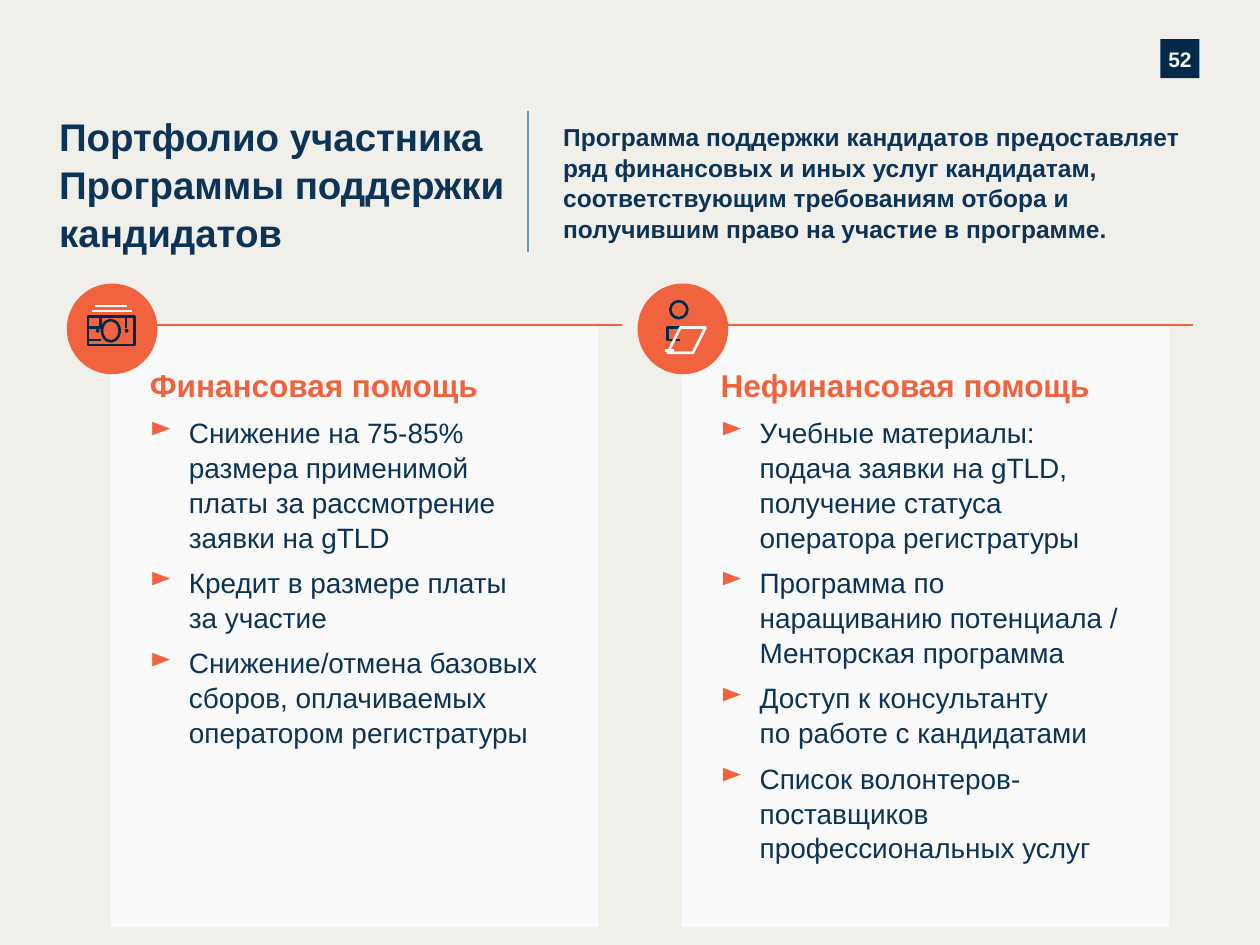
from math import cos, radians, sin
from typing import NamedTuple

from lxml.etree import SubElement
from pptx import Presentation
from pptx.dml.color import RGBColor
from pptx.enum.shapes import MSO_CONNECTOR, MSO_SHAPE
from pptx.enum.text import MSO_ANCHOR, PP_ALIGN
from pptx.oxml.ns import qn
from pptx.util import Inches, Pt

COLORS = {
    "background": "F1EFEA",
    "panel": "FAFAFA",
    "accent": "F1633E",
    "text": "0B3458",
    "dark": "002A49",
    "divider": "6D99B3",
}
FONT = "Arial"
LINE_SPACING = 1.04
CELL = Inches(10) // 100  # the slide is a grid of 100 columns and 75 rows

TITLE = "Портфолио участника Программы поддержки кандидатов"
SUMMARY = (
    "Программа поддержки кандидатов предоставляет ряд финансовых и иных услуг "
    "кандидатам, соответствующим требованиям отбора и получившим право на участие "
    "в программе."
)
FINANCIAL = [
    "Снижение на 75-85% размера применимой \nплаты за рассмотрение заявки на gTLD",
    "Кредит в размере платы \nза участие",
    "Снижение/отмена базовых сборов, оплачиваемых оператором регистратуры",
]
NON_FINANCIAL = [
    "Учебные материалы: подача заявки на gTLD, получение статуса оператора регистратуры",
    "Программа по наращиванию потенциала / Менторская программа",
    "Доступ к консультанту \nпо работе с кандидатами",
    "Список волонтеров-поставщиков профессиональных услуг",
]


class Box(NamedTuple):
    """A rectangle in grid cells."""
    left: float
    top: float
    width: float
    height: float

    def inner(self, left, top, width, height):
        return Box(self.left + left, self.top + top, width, height)

    def emu(self):
        return [round(length * CELL) for length in self]


def color(name):
    return RGBColor.from_string(COLORS[name])


def add_shape(page, kind, box, fill=None, line=None):
    shape = page.shapes.add_shape(kind, *box.emu())
    shape.shadow.inherit = False
    paint(shape, fill, line)
    return shape


def paint(shape, fill, line):
    if fill:
        shape.fill.solid()
        shape.fill.fore_color.rgb = color(fill)
    else:
        shape.fill.background()
    if line:
        shape.line.color.rgb = color(line)
        shape.line.width = Pt(1.5)
    else:
        shape.line.fill.background()


def add_line(page, start, end, name, width=1.25):
    points = [round(length * CELL) for length in (*start, *end)]
    line = page.shapes.add_connector(MSO_CONNECTOR.STRAIGHT, *points)
    line.line.color.rgb = color(name)
    line.line.width = Pt(width)
    SubElement(line._element.spPr, qn("a:effectLst"))


def add_stroke(page, box, points, name, close=False):
    """Draw an outline through points given relative to the box."""
    (left, top), *rest = [(box.left + x, box.top + y) for x, y in points]
    builder = page.shapes.build_freeform(left, top, scale=CELL)
    builder.add_line_segments(rest, close=close)
    stroke = builder.convert_to_shape()
    stroke.shadow.inherit = False
    paint(stroke, None, name)


def arc(x, y, radius, start, steps=8):
    """Points of a quarter circle, clockwise from the start angle."""
    angles = [radians(start + 90 * step / steps) for step in range(steps + 1)]
    return [(x + radius * cos(angle), y + radius * sin(angle)) for angle in angles]


def set_frame(shape, margins=(0, 0, 0, 0), anchor=MSO_ANCHOR.TOP):
    frame = shape.text_frame
    frame.word_wrap = True
    frame.vertical_anchor = anchor
    (frame.margin_left, frame.margin_top,
     frame.margin_right, frame.margin_bottom) = [round(m * CELL) for m in margins]
    return frame


def write(para, text, size, name, bold=True, align=PP_ALIGN.LEFT):
    para.text = text
    para.alignment = align
    para.line_spacing = LINE_SPACING
    font = para.font
    font.name, font.size, font.bold = FONT, Pt(size), bold
    font.color.rgb = color(name)


def add_bullet(para):
    props = para._p.get_or_add_pPr()
    indent = Inches(0.31)
    props.set("marL", str(indent))
    props.set("indent", str(-indent))
    bullet_color = SubElement(props, qn("a:buClr"))
    SubElement(bullet_color, qn("a:srgbClr"), val=COLORS["accent"])
    bullet = SubElement(props, qn("a:buChar"), char="►")
    defaults = props.find(qn("a:defRPr"))
    if defaults is not None:
        bullet.addnext(defaults)


def draw_page_number(page, box):
    badge = add_shape(page, MSO_SHAPE.RECTANGLE, box, "dark")
    frame = set_frame(badge, anchor=MSO_ANCHOR.MIDDLE)
    write(frame.paragraphs[0], "52", 12, "panel", align=PP_ALIGN.CENTER)


def draw_header(page, box):
    parts = [(TITLE, 22, box.inner(0, 0, 38.7, 9.2)),
             (SUMMARY, 14, box.inner(40, 0.8, 49.4, 9.4))]
    for text, size, area in parts:
        frame = set_frame(page.shapes.add_textbox(*area.emu()))
        write(frame.paragraphs[0], text, size, "text")
    divider = box.left + 37.2
    add_line(page, (divider, box.top), (divider, box.top + box.height), "divider")


def draw_money(page, box):
    add_shape(page, MSO_SHAPE.RECTANGLE, box.inner(1.7, 2.6, 3.7, 2.3), line="dark")
    add_shape(page, MSO_SHAPE.OVAL, box.inner(2.8, 2.9, 1.4, 1.7), line="dark")
    for x in (2.4, 4.7):
        add_shape(page, MSO_SHAPE.OVAL, box.inner(x, 3.7, 0.1, 0.1), line="dark")
    corners = [(1.9, 2.9), (5.1, 2.9), (5.1, 4.7), (1.9, 4.7)]
    for turn, (x, y) in enumerate(corners):
        add_stroke(page, box, arc(x, y, 0.45, 90 * turn), "dark")
    for left, right, y in ((2, 5.2, 2.2), (2.2, 4.8, 1.8)):
        add_line(page, (box.left + left, box.top + y),
                 (box.left + right, box.top + y), "panel", 1.5)


def draw_person(page, box):
    add_shape(page, MSO_SHAPE.OVAL, box.inner(2.6, 1.4, 1.35, 1.35), line="dark")
    body = [(3.1, 4.8), *arc(2.5, 4.3, 0.5, 90), *arc(2.8, 3.9, 0.8, 180),
            (3.8, 3.1), (4.3, 3.3)]
    add_stroke(page, box, body, "dark")
    add_stroke(page, box, [(3.2, 4.3), (2.7, 4.3), (2.6, 4.2), (2.6, 3.9)], "dark")
    add_line(page, (box.left + 2.2, box.top + 5.3),
             (box.left + 2.9, box.top + 5.3), "panel", 1.5)
    laptop = [(3.4, 3.8), (2.9, 5.3), (4.9, 5.3), (5.4, 3.8)]
    add_stroke(page, box, laptop, "panel", close=True)


def draw_column(page, box, heading, items, draw_icon):
    panel = add_shape(page, MSO_SHAPE.RECTANGLE, box, "panel")
    frame = set_frame(panel, (3.1, 3.1, 3.5, 3.1))
    write(frame.paragraphs[0], heading, 18, "accent")
    for item in items:
        para = frame.add_paragraph()
        write(para, item, 16, "text", bold=False)
        para.space_before = Pt(6)
        add_bullet(para)
    add_line(page, (box.left, box.top), (box.left + 40.6, box.top), "accent")
    circle = box.inner(-3.5, -3.3, 7.2, 7.2)
    add_shape(page, MSO_SHAPE.OVAL, circle, "accent")
    draw_icon(page, circle)


def main():
    deck = Presentation()
    deck.slide_width, deck.slide_height = 100 * CELL, 75 * CELL
    page = deck.slides.add_slide(deck.slide_layouts[6])
    page.background.fill.solid()
    page.background.fill.fore_color.rgb = color("background")
    draw_page_number(page, Box(92.1, 3.1, 3.1, 3.1))
    draw_header(page, Box(4.7, 8.8, 89.4, 11.2))
    columns = [("Финансовая помощь", FINANCIAL, draw_money),
               ("Нефинансовая помощь", NON_FINANCIAL, draw_person)]
    for index, column in enumerate(columns):
        draw_column(page, Box(8.8 + 45.3 * index, 25.8, 38.7, 47.8), *column)
    deck.save("out.pptx")


if __name__ == "__main__":
    main()
